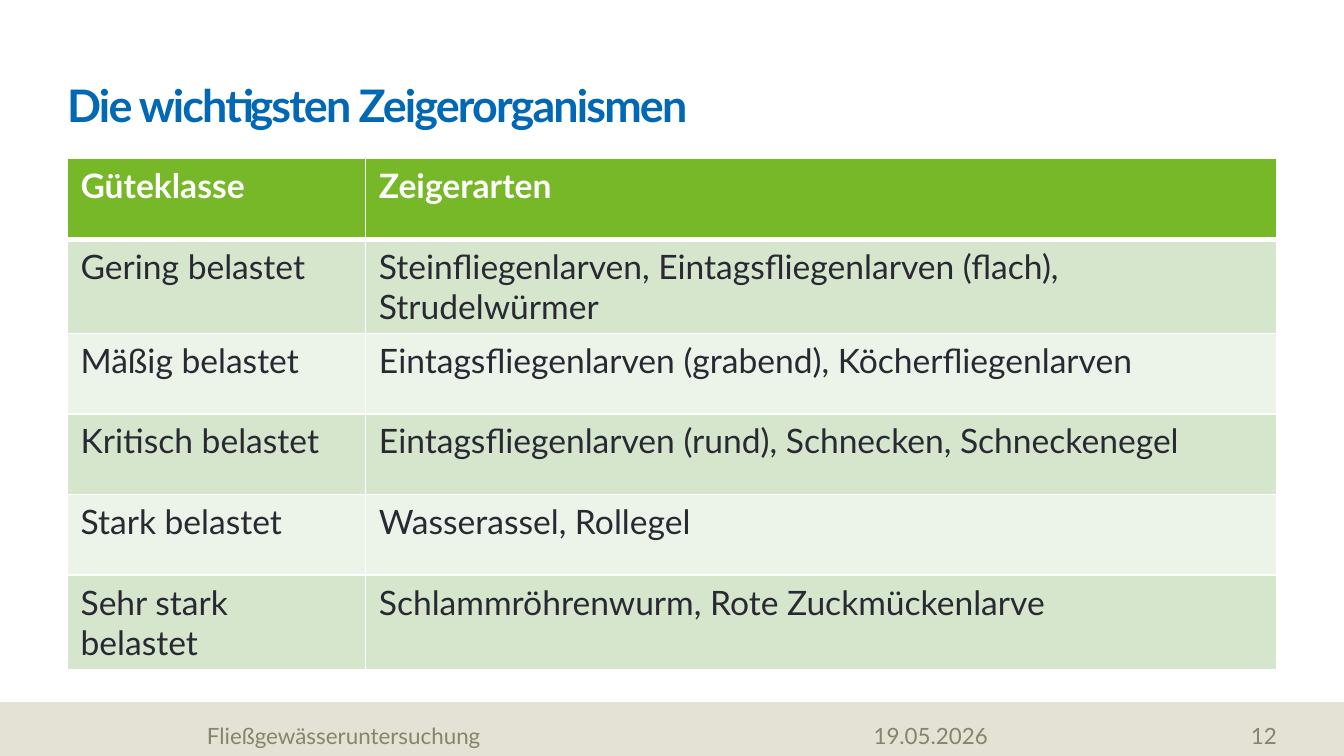
from dataclasses import dataclass

from lxml import etree
from pptx import Presentation
from pptx.dml.color import RGBColor
from pptx.enum.shapes import MSO_SHAPE
from pptx.enum.text import MSO_ANCHOR, PP_ALIGN
from pptx.oxml.ns import qn
from pptx.util import Inches, Pt

RECTANGLE = MSO_SHAPE.RECTANGLE
BOTTOM = MSO_ANCHOR.BOTTOM
LEFT, RIGHT = PP_ALIGN.LEFT, PP_ALIGN.RIGHT


@dataclass(frozen=True)
class Theme:
    font: str = "Lato"
    title: str = "0068B4"
    header: str = "76B828"
    odd_row: str = "D6E6CD"
    even_row: str = "ECF3E8"
    text: str = "292934"
    white: str = "FFFFFF"
    band: str = "E3E2D4"
    footer: str = "86846B"
    title_size: int = 24
    table_size: int = 18
    footer_size: int = 12


THEME = Theme()

SLIDE_WIDTH = 10
SLIDE_HEIGHT = SLIDE_WIDTH * 9 / 16
BAND_HEIGHT = 0.4

INDICATORS = [
    ("Güteklasse", "Zeigerarten"),
    ("Gering belastet", "Steinfliegenlarven, Eintagsfliegenlarven (flach), Strudelwürmer"),
    ("Mäßig belastet", "Eintagsfliegenlarven (grabend), Köcherfliegenlarven"),
    ("Kritisch belastet", "Eintagsfliegenlarven (rund), Schnecken, Schneckenegel"),
    ("Stark belastet", "Wasserassel, Rollegel"),
    ("Sehr stark belastet", "Schlammröhrenwurm, Rote Zuckmückenlarve"),
]
COLUMN_WIDTHS = (2.22, 6.78)
ROW_HEIGHT = 0.6


def style_text(frame, size, color, bold=False):
    for paragraph in frame.paragraphs:
        for run in paragraph.runs:
            run.font.name = THEME.font
            run.font.size = Pt(size)
            run.font.bold = bold
            run.font.color.rgb = RGBColor.from_string(color)


def add_label(slide, text, box, size, color, bold=False, align=LEFT, insets=(0, 0, 0, 0)):
    frame = slide.shapes.add_textbox(*map(Inches, box)).text_frame
    frame.word_wrap = True
    frame.vertical_anchor = BOTTOM
    frame.margin_left, frame.margin_top, frame.margin_right, frame.margin_bottom = map(Inches, insets)
    frame.text = text
    frame.paragraphs[0].alignment = align
    style_text(frame, size, color, bold)
    return frame.paragraphs[0]


def add_title(slide, text):
    title = add_label(slide, text, (0.5, 0.13, 9, 0.85), THEME.title_size, THEME.title, bold=True)
    title.line_spacing = 0.9
    title.runs[0].font._element.set("spc", "-100")


def add_footer_band(slide):
    band = slide.shapes.add_shape(
        RECTANGLE, 0, Inches(SLIDE_HEIGHT - BAND_HEIGHT), Inches(SLIDE_WIDTH), Inches(BAND_HEIGHT))
    band.shadow.inherit = False
    band.fill.solid()
    band.fill.fore_color.rgb = RGBColor.from_string(THEME.band)
    band.line.fill.background()


def add_footer(slide, topic, date, number):
    for text, left, width, align, insets in (
        (date, 6.5, 2.36, LEFT, (0, 0.05, 0.1, 0)),
        (topic, 1.54, 4.81, LEFT, (0, 0, 0, 0)),
        (number, 8.94, 0.56, RIGHT, (0, 0, 0, 0)),
    ):
        add_label(slide, text, (left, 5.37, width, 0.2), THEME.footer_size, THEME.footer,
                  align=align, insets=insets)


def set_borders(cell, widths):
    properties = cell._tc.get_or_add_tcPr()
    for side, width in widths.items():
        border = etree.SubElement(properties, qn(f"a:ln{side}"), w=str(Pt(width)))
        fill = etree.SubElement(border, qn("a:solidFill"))
        etree.SubElement(fill, qn("a:srgbClr"), val=THEME.white)


def add_indicator_table(slide):
    table = slide.shapes.add_table(
        len(INDICATORS), len(COLUMN_WIDTHS), Inches(0.5), Inches(1.18),
        Inches(sum(COLUMN_WIDTHS)), Inches(ROW_HEIGHT * len(INDICATORS))).table
    for column, width in zip(table.columns, COLUMN_WIDTHS):
        column.width = Inches(width)
    for index, entries in enumerate(INDICATORS):
        table.rows[index].height = Inches(ROW_HEIGHT)
        is_header = index == 0
        row_fill = THEME.header if is_header else THEME.odd_row if index % 2 else THEME.even_row
        borders = {"L": 1, "R": 1, "T": 3 if index == 1 else 1, "B": 3 if is_header else 1}
        for column, entry in enumerate(entries):
            cell = table.cell(index, column)
            set_borders(cell, borders)
            cell.fill.solid()
            cell.fill.fore_color.rgb = RGBColor.from_string(row_fill)
            cell.text_frame.text = entry
            style_text(cell.text_frame, THEME.table_size,
                       THEME.white if is_header else THEME.text, is_header)


def main():
    presentation = Presentation()
    presentation.slide_width = Inches(SLIDE_WIDTH)
    presentation.slide_height = Inches(SLIDE_HEIGHT)
    slide = presentation.slides.add_slide(presentation.slide_layouts[6])
    add_footer_band(slide)
    add_title(slide, "Die wichtigsten Zeigerorganismen")
    add_indicator_table(slide)
    add_footer(slide, "Fließgewässeruntersuchung", "19.05.2026", "12")
    presentation.save("out.pptx")


if __name__ == "__main__":
    main()
